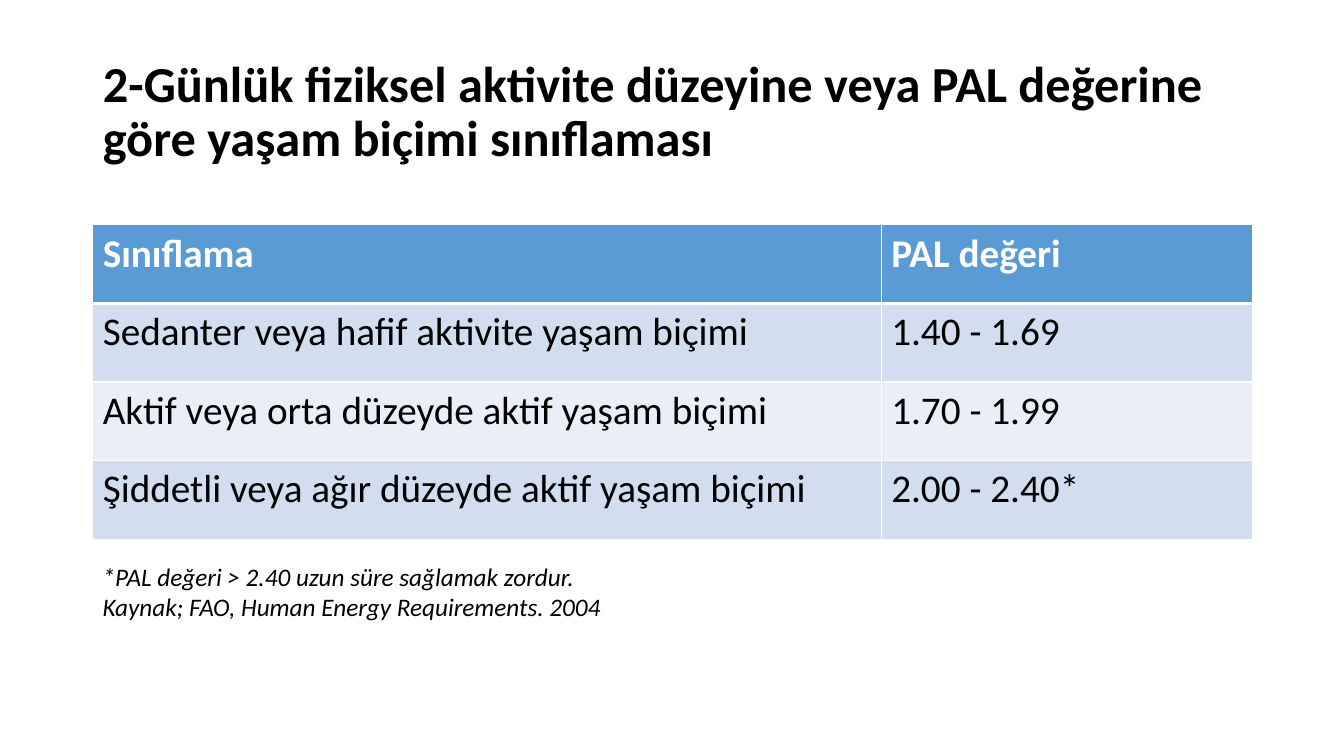
from lxml import etree
from pptx import Presentation
from pptx.dml.color import RGBColor
from pptx.enum import text
from pptx.oxml import ns
from pptx.util import Inches, Pt

TITLE = "2-Günlük fiziksel aktivite düzeyine veya PAL değerine göre yaşam biçimi sınıflaması"
ROWS = [
    ("Sınıflama", "PAL değeri"),
    ("Sedanter veya hafif aktivite yaşam biçimi", "1.40 - 1.69"),
    ("Aktif veya orta düzeyde aktif yaşam biçimi", "1.70 - 1.99"),
    ("Şiddetli veya ağır düzeyde aktif yaşam biçimi", "2.00 - 2.40*"),
]
NOTES = [
    "*PAL değeri > 2.40 uzun süre sağlamak zordur.",
    "Kaynak; FAO, Human Energy Requirements. 2004",
]
BLACK, WHITE, HEADER = "000000", "FFFFFF", "5B9BD5"
BANDS = ("EAEFF7", "D2DEEF")
LEFT, WIDTH = 0.92, 11.5
COLUMNS = (7.82, 3.68)
ROW_HEIGHT = 0.78


def rgb(value):
    return RGBColor.from_string(value)


def add_run(p, words, size, color=BLACK, bold=False, italic=False):
    r = p.add_run()
    r.text = words
    f = r.font
    f.name, f.size, f.bold, f.italic = "Calibri", Pt(size), bold, italic
    f.color.rgb = rgb(color)


def add_borders(cell, bottom):
    """Draw white cell borders, one point wide except at the bottom."""
    tc_pr = cell._tc.get_or_add_tcPr()
    widths = {"lnL": 1, "lnR": 1, "lnT": 1, "lnB": bottom}
    for i, (side, width) in enumerate(widths.items()):
        ln = etree.Element(ns.qn("a:" + side), w=str(Pt(width)))
        fill = etree.SubElement(ln, ns.qn("a:solidFill"))
        etree.SubElement(fill, ns.qn("a:srgbClr"), val=WHITE)
        tc_pr.insert(i, ln)


prs = Presentation()
prs.slide_width, prs.slide_height = Inches(13.33), Inches(7.5)
s = prs.slides.add_slide(prs.slide_layouts[5])

title = s.shapes.title
title.left, title.top = Inches(LEFT), Inches(0.4)
title.width, title.height = Inches(WIDTH), Inches(1.45)
tf = title.text_frame
tf.word_wrap = True
tf.auto_size = text.MSO_AUTO_SIZE.NONE
tf.vertical_anchor = text.MSO_ANCHOR.MIDDLE
p = tf.paragraphs[0]
p.alignment = text.PP_ALIGN.LEFT
p.line_spacing = 0.9
add_run(p, TITLE, 36, bold=True)

table = s.shapes.add_table(
    len(ROWS), len(COLUMNS), Inches(LEFT), Inches(2.23),
    Inches(WIDTH), Inches(ROW_HEIGHT * len(ROWS))).table
for column, width in zip(table.columns, COLUMNS):
    column.width = Inches(width)
for i, row in enumerate(ROWS):
    table.rows[i].height = Inches(ROW_HEIGHT)
    is_header = i == 0
    for j, words in enumerate(row):
        cell = table.cell(i, j)
        cell.fill.solid()
        cell.fill.fore_color.rgb = rgb(HEADER if is_header else BANDS[i % 2])
        add_borders(cell, 3 if is_header else 1)
        add_run(cell.text_frame.paragraphs[0], words, 28,
                WHITE if is_header else BLACK, bold=is_header)

notes = s.shapes.add_textbox(Inches(LEFT), Inches(5.52), Inches(5.9), Inches(0.71))
tf = notes.text_frame
tf.word_wrap = True
tf.auto_size = text.MSO_AUTO_SIZE.SHAPE_TO_FIT_TEXT
for i, line in enumerate(NOTES):
    p = tf.add_paragraph() if i else tf.paragraphs[0]
    add_run(p, line, 18, italic=True)

prs.save("out.pptx")
